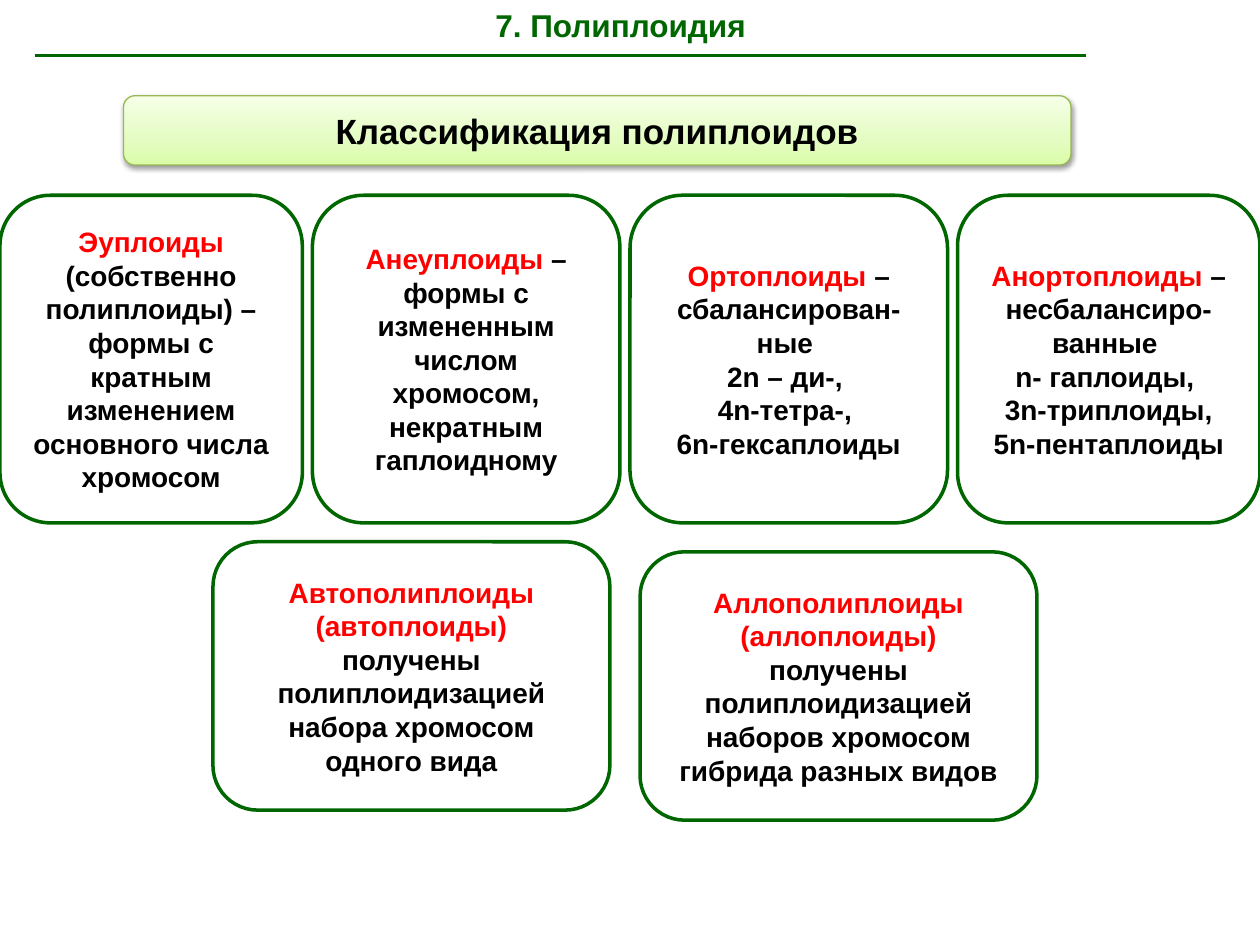
import copy
import itertools
import pptx
import pptx.util
import pptx.oxml
import pptx.oxml.ns
import pptx.dml.color
import pptx.enum.shapes
import pptx.enum.text

HUES = {"green": "006600", "red": "FF0000", "black": "000000", "edge": "98B955"}
STOPS = [(0, "DAFDA7"), (0.35, "E4FCC2"), (1, "F5FFE7")]
TITLE = "7. Полиплоидия"
HEAD = "Классификация полиплоидов"
TOP = [
    (2.4, "Эуплоиды", [" (собственно полиплоиды) – формы с кратным изменением основного числа хромосом"]),
    (2.44, "Анеуплоиды ", ["– формы с измененным числом хромосом, некратным гаплоидному"]),
    (2.52, "Ортоплоиды ", ["– сбалансирован-ные ", "2n – ди-, ", "4n-тетра-, ", "6n-гексаплоиды"]),
    (2.4, "Анортоплоиды", [" – несбалансиро-ванные ", "n- гаплоиды, ", "3n-триплоиды, 5n-пентаплоиды"]),
]
LOW = [
    ("Автополиплоиды (автоплоиды)", "\vполучены полиплоидизацией набора хромосом одного вида"),
    ("Аллополиплоиды (аллоплоиды)", "\vполучены полиплоидизацией наборов хромосом гибрида разных видов"),
]
WIDE, HIGH = 10, 7.5
GAP = 0.08
ROW = 1.55
SHADE = """<a:effectLst %s><a:outerShdw blurRad="39370" dist="20320" dir="5400000" rotWithShape="0">
<a:srgbClr val="000000"><a:alpha val="38000"/></a:srgbClr></a:outerShdw></a:effectLst>"""

inch = pptx.util.Inches
kinds = pptx.enum.shapes
NS = pptx.oxml.ns.nsdecls("a")
qn = pptx.oxml.ns.qn


def rgb(code):
    return pptx.dml.color.RGBColor.from_string(code)


def style(para, size, hue):
    para.alignment = pptx.enum.text.PP_ALIGN.CENTER
    font = para.font
    font.name, font.size, font.bold = "Arial", pptx.util.Pt(size), True
    font.color.rgb = rgb(HUES[hue])


def box(slide, area, hue, width):
    shape = slide.shapes.add_shape(kinds.MSO_SHAPE.ROUNDED_RECTANGLE, *map(inch, area))
    shape.shadow.inherit = False
    shape.line.color.rgb = rgb(HUES[hue])
    shape.line.width = pptx.util.Pt(width)
    shape.text_frame.word_wrap = True
    shape.text_frame.vertical_anchor = pptx.enum.text.MSO_ANCHOR.MIDDLE
    return shape


def card(slide, area, term, lines):
    shape = box(slide, area, "green", 2)
    shape.fill.background()
    frame = shape.text_frame
    for i, line in enumerate(lines):
        para = frame.add_paragraph() if i else frame.paragraphs[0]
        style(para, 16, "black")
        if i == 0:
            run = para.add_run()
            run.text = term
            run.font.color.rgb = rgb(HUES["red"])
        if line.startswith("\v"):
            para.add_line_break()
        para.add_run().text = line.lstrip("\v")


def banner(slide):
    shape = box(slide, (0.98, 0.76, 7.52, 0.55), "edge", 0.75)
    fill = shape.fill
    fill.gradient()
    fill.gradient_angle = 90
    props = shape.element.spPr
    stops = props.find(".//" + qn("a:gsLst"))
    stops.append(copy.deepcopy(stops[0]))
    for stop, (place, code) in zip(fill.gradient_stops, STOPS):
        stop.position = place
        stop.color.rgb = rgb(code)
    props.replace(props.find(qn("a:effectLst")), pptx.oxml.parse_xml(SHADE % NS))
    para = shape.text_frame.paragraphs[0]
    para.text = HEAD
    style(para, 20, "black")


def main():
    deck = pptx.Presentation()
    deck.slide_width, deck.slide_height = inch(WIDE), inch(HIGH)
    slide = deck.slides.add_slide(deck.slide_layouts[6])

    rule = slide.shapes.add_connector(
        kinds.MSO_CONNECTOR.STRAIGHT, *map(inch, (0.28, 0.44, 8.62, 0.44)))
    rule.line.color.rgb = rgb(HUES["green"])
    rule.line.width = pptx.util.Pt(2)
    rule.element.spPr.append(pptx.oxml.parse_xml("<a:effectLst %s/>" % NS))

    banner(slide)
    lefts = itertools.accumulate((width + GAP for width, *_ in TOP), initial=0)
    for left, (width, term, lines) in zip(lefts, TOP):
        card(slide, (left, ROW, width, 2.6), term, lines)
    for i, (term, line) in enumerate(LOW):
        card(slide, (1.69 + i * 3.39, 4.3 + i * GAP, 3.15, 2.13), term, [line])

    title = slide.shapes.add_textbox(*map(inch, (1.54, 0, 6.77, 0.4)))
    title.text_frame.word_wrap = True
    para = title.text_frame.paragraphs[0]
    para.text = TITLE
    style(para, 18, "green")
    deck.save("out.pptx")


if __name__ == "__main__":
    main()
